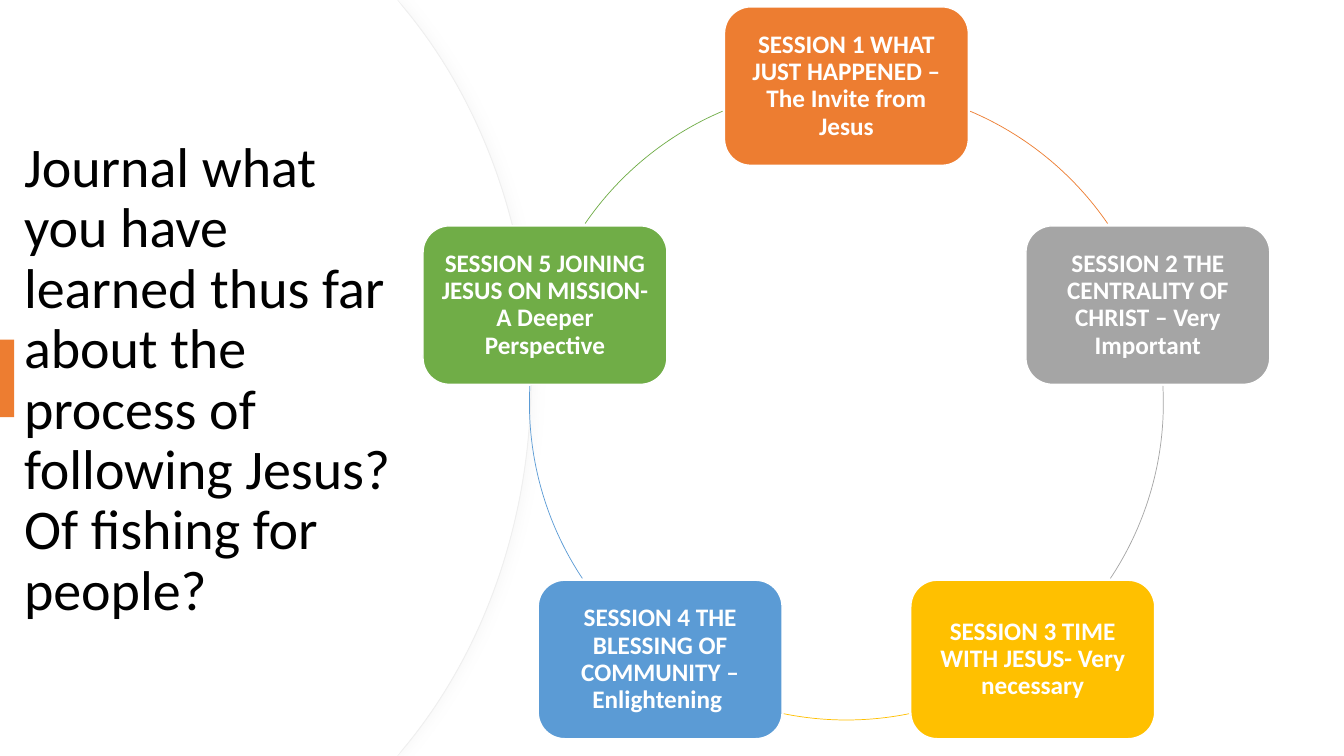
"""Build a slide with a journal prompt beside a ring of five sessions."""
import math

from lxml import etree
from pptx import Presentation
from pptx.dml.color import RGBColor
from pptx.enum import shapes, text
from pptx.oxml import ns
from pptx.util import Pt

PROMPT = ("Journal what you have learned thus far about the process of "
          "following Jesus? Of fishing for people?")
WHITE = RGBColor(0xFF, 0xFF, 0xFF)
BLACK = RGBColor(0, 0, 0)
EDGE = RGBColor(0xEF, 0xEF, 0xEF)
ORANGE = RGBColor(0xED, 0x7D, 0x31)
GRAY = RGBColor(0xA5, 0xA5, 0xA5)
GOLD = RGBColor(0xFF, 0xC0, 0x00)
BLUE = RGBColor(0x5B, 0x9B, 0xD5)
GREEN = RGBColor(0x70, 0xAD, 0x47)

SESSIONS = [
    ("SESSION 1 WHAT JUST HAPPENED – The Invite from Jesus", ORANGE, (293, 325.5)),
    ("SESSION 2 THE CENTRALITY OF CHRIST – Very Important", GRAY, (-3.1, 33.6)),
    ("SESSION 3 TIME WITH JESUS- Very necessary", GOLD, (78.6, 101.4)),
    ("SESSION 4 THE BLESSING OF COMMUNITY – Enlightening ", BLUE, (146.4, 183.1)),
    ("SESSION 5 JOINING JESUS ON MISSION- A Deeper Perspective", GREEN, (214.5, 247)),
]
WIDTH, HEIGHT = 960, 540
CENTER_X, CENTER_Y, RADIUS = 604.6, 287.9, 226.4
CARD_WIDTH, CARD_HEIGHT = 174.2, 113.2
PANEL_TOP_RIGHT = 283.7


def add_outline(slide, left, top, width, height, steps):
    builder = slide.shapes.build_freeform(Pt(left), Pt(top))
    builder.add_line_segments([(Pt(left + width), Pt(top + height))], close=False)
    outline = builder.convert_to_shape()
    outline.shadow.inherit = False
    track = outline._element.spPr.find(".//" + ns.qn("a:path"))
    for child in list(track):
        track.remove(child)
    for command, points in steps:
        step = etree.SubElement(track, ns.qn("a:" + command))
        for x, y in points:
            etree.SubElement(step, ns.qn("a:pt"), x=str(Pt(x)), y=str(Pt(y)))
    return outline


def add_panel(slide, right):
    shift = right - 379.4
    upper = [(288.7 + shift, 5.8), (344.9 + shift, 73.4), (right, 167), (right, HEIGHT / 2)]
    lower = [(x, HEIGHT - y) for x, y in reversed(upper)]
    panel = add_outline(slide, 0, 0, right, HEIGHT, [
        ("moveTo", [(0, 0)]),
        ("lnTo", [(PANEL_TOP_RIGHT, 0)]),
        ("lnTo", upper[:1]),
        ("cubicBezTo", upper[1:]),
        ("cubicBezTo", lower[1:]),
        ("lnTo", [(PANEL_TOP_RIGHT, HEIGHT)]),
        ("lnTo", [(0, HEIGHT)]),
        ("close", []),
    ])
    fill_plain(panel, WHITE)
    return panel


def add_soft_shadow(shape):
    effects = shape._element.spPr.find(ns.qn("a:effectLst"))
    shadow = etree.SubElement(effects, ns.qn("a:outerShdw"), blurRad=str(Pt(7)),
                              dist=str(Pt(3)), dir="0", algn="l", rotWithShape="0")
    color = etree.SubElement(shadow, ns.qn("a:srgbClr"), val="D9D9D9")
    etree.SubElement(color, ns.qn("a:alpha"), val="15000")


def fill_plain(shape, color):
    shape.fill.solid()
    shape.fill.fore_color.rgb = color
    shape.line.fill.background()


def set_line(shape, color, width):
    shape.line.color.rgb = color
    shape.line.width = Pt(width)


def add_preset(slide, kind, left, top, width, height, color):
    shape = slide.shapes.add_shape(kind, Pt(left), Pt(top), Pt(width), Pt(height))
    shape.shadow.inherit = False
    fill_plain(shape, color)
    return shape


def write(shape, words, size, color, bold=False, align=text.PP_ALIGN.LEFT):
    frame = shape.text_frame
    frame.word_wrap = True
    frame.vertical_anchor = text.MSO_ANCHOR.MIDDLE
    para = frame.paragraphs[0]
    para.text = words
    para.alignment = align
    para.line_spacing = 0.9
    para.font.name = "Calibri"
    para.font.size = Pt(size)
    para.font.bold = bold
    para.font.color.rgb = color
    return frame


def add_card(slide, words, color, angle):
    left = CENTER_X + RADIUS * math.cos(angle) - CARD_WIDTH / 2
    top = CENTER_Y + RADIUS * math.sin(angle) - CARD_HEIGHT / 2
    card = add_preset(slide, shapes.MSO_SHAPE.ROUNDED_RECTANGLE,
                      left, top, CARD_WIDTH, CARD_HEIGHT, color)
    set_line(card, WHITE, 1)
    frame = write(card, words, 18, WHITE, True, text.PP_ALIGN.CENTER)
    frame.margin_left = frame.margin_right = Pt(5)
    frame.margin_top = frame.margin_bottom = Pt(5)


def add_arc(slide, color, angles):
    start, end = map(math.radians, angles)
    reach = 4 / 3 * math.tan((end - start) / 4)

    def on_ring(angle, pull):
        return (RADIUS * (1 + math.cos(angle) - pull * math.sin(angle)),
                RADIUS * (1 + math.sin(angle) + pull * math.cos(angle)))

    arc = add_outline(slide, CENTER_X - RADIUS, CENTER_Y - RADIUS, 2 * RADIUS, 2 * RADIUS, [
        ("moveTo", [on_ring(start, 0)]),
        ("cubicBezTo", [on_ring(start, reach), on_ring(end, -reach), on_ring(end, 0)]),
    ])
    arc.fill.background()
    set_line(arc, color, 0.5)


def main():
    deck = Presentation()
    deck.slide_width, deck.slide_height = Pt(WIDTH), Pt(HEIGHT)
    slide = deck.slides.add_slide(deck.slide_layouts[6])

    back_panel = add_panel(slide, 379.4)
    set_line(back_panel, EDGE, 0.75)
    add_soft_shadow(back_panel)
    add_panel(slide, 378.7)

    title = slide.shapes.add_textbox(Pt(10.1), Pt(8.4), Pt(280), Pt(527))
    write(title, PROMPT, 40, BLACK)
    add_preset(slide, shapes.MSO_SHAPE.RECTANGLE, 0, 242.6, 10.1, 55.4, ORANGE)

    for index, (words, color, angles) in enumerate(SESSIONS):
        add_card(slide, words, color, math.radians(72 * index - 90))
        add_arc(slide, color, angles)
    deck.save("out.pptx")


if __name__ == "__main__":
    main()
